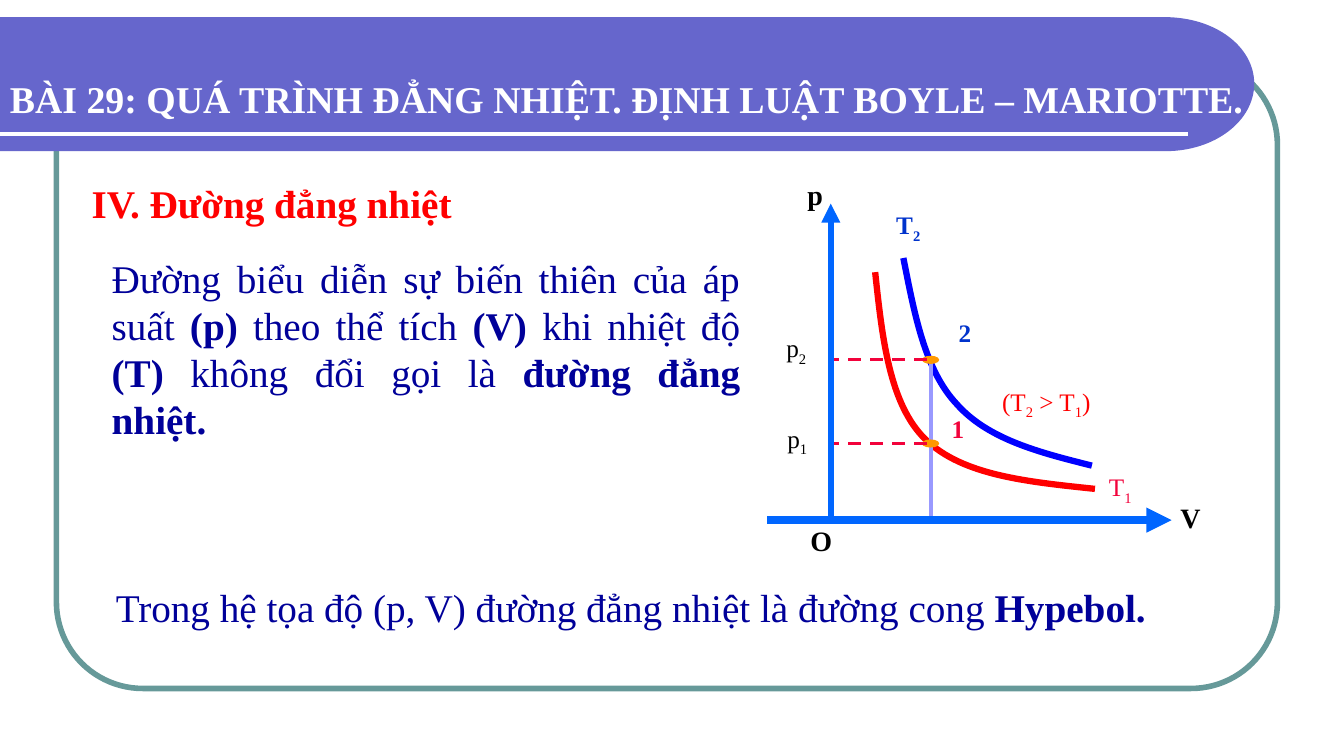
from dataclasses import dataclass

from lxml import etree
from pptx import Presentation
from pptx.dml.color import RGBColor
from pptx.enum.dml import MSO_LINE
from pptx.enum.shapes import MSO_CONNECTOR, MSO_SHAPE
from pptx.enum.text import MSO_ANCHOR, PP_ALIGN
from pptx.oxml.ns import qn
from pptx.util import Inches, Pt

STRAIGHT = MSO_CONNECTOR.STRAIGHT
OVAL, ROUND = MSO_SHAPE.OVAL, MSO_SHAPE.ROUNDED_RECTANGLE
DASH = MSO_LINE.DASH
TOP, MIDDLE = MSO_ANCHOR.TOP, MSO_ANCHOR.MIDDLE
LEFT, JUSTIFY = PP_ALIGN.LEFT, PP_ALIGN.JUSTIFY

FONT = "Times New Roman"
WHITE, BLACK, RED, ROSE = "FFFFFF", "000000", "FF0000", "F2023B"
NAVY, BLUE, AXIS, ORANGE = "000099", "0033CC", "0066FF", "FF9900"
MID_X, AXIS_X, AXIS_Y = 9.23, 8.24, 5.16

Point = tuple[float, float]


@dataclass
class Label:
    """Text pieces alternate: plain first, then marked (bold or subscript)."""
    pieces: tuple[str, ...]
    box: tuple[float, float, float, float]
    size: float
    color: str
    bold: bool = False
    sub: bool = True
    wrap: bool = False
    align: PP_ALIGN = LEFT
    anchor: MSO_ANCHOR = TOP


@dataclass
class Rule:
    start: Point
    end: Point
    color: str
    width: float
    dashed: bool = False
    arrow: bool = False


@dataclass
class Curve:
    nodes: tuple[Point, ...]
    color: str


HEADER_RULE = Rule((0, 1.33), (11.78, 1.33), WHITE, 3)

BAND = ((0, 0.17), (11.55, 0.17), (12.05, 0.17), (12.44, 0.46),
        (12.44, 0.83), (12.44, 1.2), (12.05, 1.5), (11.56, 1.5), (0, 1.5))

CURVES = (
    Curve(((8.96, 2.56), (9.07, 3.11), (9.17, 3.67), (9.49, 4.01),
           (9.8, 4.36), (10.31, 4.49), (10.83, 4.62)), "0000FF"),
    Curve(((8.68, 2.7), (8.75, 3.35), (8.82, 4.01), (9.18, 4.36),
           (9.55, 4.72), (10.2, 4.78), (10.86, 4.85)), RED),
)

STATES = (3.57, 4.4)

DROP = Rule((MID_X, STATES[0]), (MID_X, AXIS_Y), "9999FF", 3)

GUIDES = tuple(Rule((9.19, y), (8.23, y), ROSE, 2.25, dashed=True)
               for y in STATES)

AXES = (
    Rule((7.61, AXIS_Y), (11.62, AXIS_Y), AXIS, 6, arrow=True),
    Rule((AXIS_X, AXIS_Y), (AXIS_X, 2.02), AXIS, 4.5, arrow=True),
)

LABELS = (
    Label(("T", "2"), (8.79, 2.03, 0.45, 0.4), 18, BLUE, bold=True),
    Label(("T", "1"), (10.9, 4.63, 0.44, 0.4), 18, ROSE),
    Label(("1",), (9.34, 4.05, 0.33, 0.4), 18, ROSE, bold=True),
    Label(("2",), (9.41, 3.1, 0.33, 0.4), 18, BLUE, bold=True),
    Label(("p", "2"), (7.7, 3.25, 0.49, 0.4), 18, BLACK, wrap=True),
    Label(("p", "1"), (7.71, 4.15, 0.49, 0.4), 18, BLACK, wrap=True),
    Label(("V",), (11.61, 4.92, 0.4, 0.43), 20, BLACK, bold=True),
    Label(("p",), (7.91, 1.71, 0.6, 0.43), 20, BLACK, bold=True, wrap=True),
    Label(("O",), (7.94, 5.14, 0.42, 0.43), 20, BLACK, bold=True),
    Label(("(T", "2", " > T", "1", ")"), (9.84, 3.78, 1.92, 0.4), 18, RED,
          wrap=True),
    Label(("IV. Đường đẳng nhiệt",), (0.81, 1.73, 9, 0.57), 28, RED,
          bold=True, wrap=True),
    Label(("Đường biểu diễn sự biến thiên của áp suất ", "(p) ",
           "theo thể tích ", "(V) ", "khi nhiệt độ ", "(T) ",
           "không đổi gọi là ", "đường đẳng nhiệt."),
          (1.01, 2.47, 6.43, 1.13), 28, NAVY, sub=False, wrap=True,
          align=JUSTIFY),
    Label(("BÀI 29: QUÁ TRÌNH ĐẲNG NHIỆT. ĐỊNH LUẬT BOYLE – MARIOTTE.",),
          (0, 0.54, 13.33, 0.87), 27, WHITE, bold=True, wrap=True,
          anchor=MIDDLE),
    Label(("Trong hệ tọa độ (p, V) đường đẳng nhiệt là đường cong ",
           "Hypebol."),
          (1.05, 5.74, 11.23, 1.13), 28, NAVY, sub=False, wrap=True,
          align=JUSTIFY),
)


def rgb(code: str) -> RGBColor:
    return RGBColor.from_string(code)


def paint(shape, fill: str | None, line: str | None, width: float = 0) -> None:
    shape.shadow.inherit = False
    if fill:
        shape.fill.solid()
        shape.fill.fore_color.rgb = rgb(fill)
    else:
        shape.fill.background()
    if line:
        shape.line.color.rgb = rgb(line)
        shape.line.width = Pt(width)
    else:
        shape.line.fill.background()


def outline(slide, nodes: tuple[Point, ...], skip: int = 0,
            close: bool = False):
    """Draw skip straight sides, then two cubic curves, then straight sides."""
    spots = [(Inches(x), Inches(y)) for x, y in nodes]
    form = slide.shapes.build_freeform(*spots[0])
    form.add_line_segments(spots[1:], close=close)
    shape = form.convert_to_shape()
    sides = list(shape.element.iter(qn("a:lnTo")))
    for first in (skip, skip + 3):
        trio = sides[first:first + 3]
        bend = etree.Element(qn("a:cubicBezTo"))
        trio[0].addprevious(bend)
        for side in trio:
            bend.append(side[0])
            side.getparent().remove(side)
    return shape


def draw_frame(slide) -> None:
    box = map(Inches, (0.56, 0.58, 12.11, 6.25))
    frame = slide.shapes.add_shape(ROUND, *box)
    frame.adjustments[0] = 0.137
    paint(frame, None, "669999", 4)


def draw_rule(slide, rule: Rule) -> None:
    ends = map(Inches, (*rule.start, *rule.end))
    link = slide.shapes.add_connector(STRAIGHT, *ends)
    link.line.color.rgb = rgb(rule.color)
    link.line.width = Pt(rule.width)
    if rule.dashed:
        link.line.dash_style = DASH
    props = link.element.spPr
    if rule.arrow:
        tail = etree.SubElement(props.find(qn("a:ln")), qn("a:tailEnd"))
        tail.set("type", "triangle")
    etree.SubElement(props, qn("a:effectLst"))


def draw_state(slide, y: float) -> None:
    wide, high = 0.16, 0.07
    box = map(Inches, (MID_X - wide / 2, y - high / 2, wide, high))
    paint(slide.shapes.add_shape(OVAL, *box), ORANGE, ORANGE, 0.75)


def draw_label(slide, label: Label) -> None:
    frame = slide.shapes.add_textbox(*map(Inches, label.box)).text_frame
    frame.word_wrap = label.wrap
    frame.vertical_anchor = label.anchor
    para = frame.paragraphs[0]
    para.alignment = label.align
    for index, piece in enumerate(label.pieces):
        marked = index % 2 == 1
        run = para.add_run()
        run.text = piece
        font = run.font
        font.name, font.size = FONT, Pt(label.size)
        font.color.rgb = rgb(label.color)
        font.bold = label.bold or (marked and not label.sub)
        if marked and label.sub:
            run._r.get_or_add_rPr().set("baseline", "-25000")


def main() -> None:
    deck = Presentation()
    deck.slide_width, deck.slide_height = Inches(13.33), Inches(7.5)
    slide = deck.slides.add_slide(deck.slide_layouts[6])
    draw_frame(slide)
    paint(outline(slide, BAND, skip=1, close=True), "6666CC", None)
    draw_rule(slide, HEADER_RULE)
    for curve in CURVES:
        paint(outline(slide, curve.nodes), None, curve.color, 4.5)
    draw_rule(slide, DROP)
    for y in STATES:
        draw_state(slide, y)
    for rule in GUIDES + AXES:
        draw_rule(slide, rule)
    for label in LABELS:
        draw_label(slide, label)
    deck.save("out.pptx")


if __name__ == "__main__":
    main()
